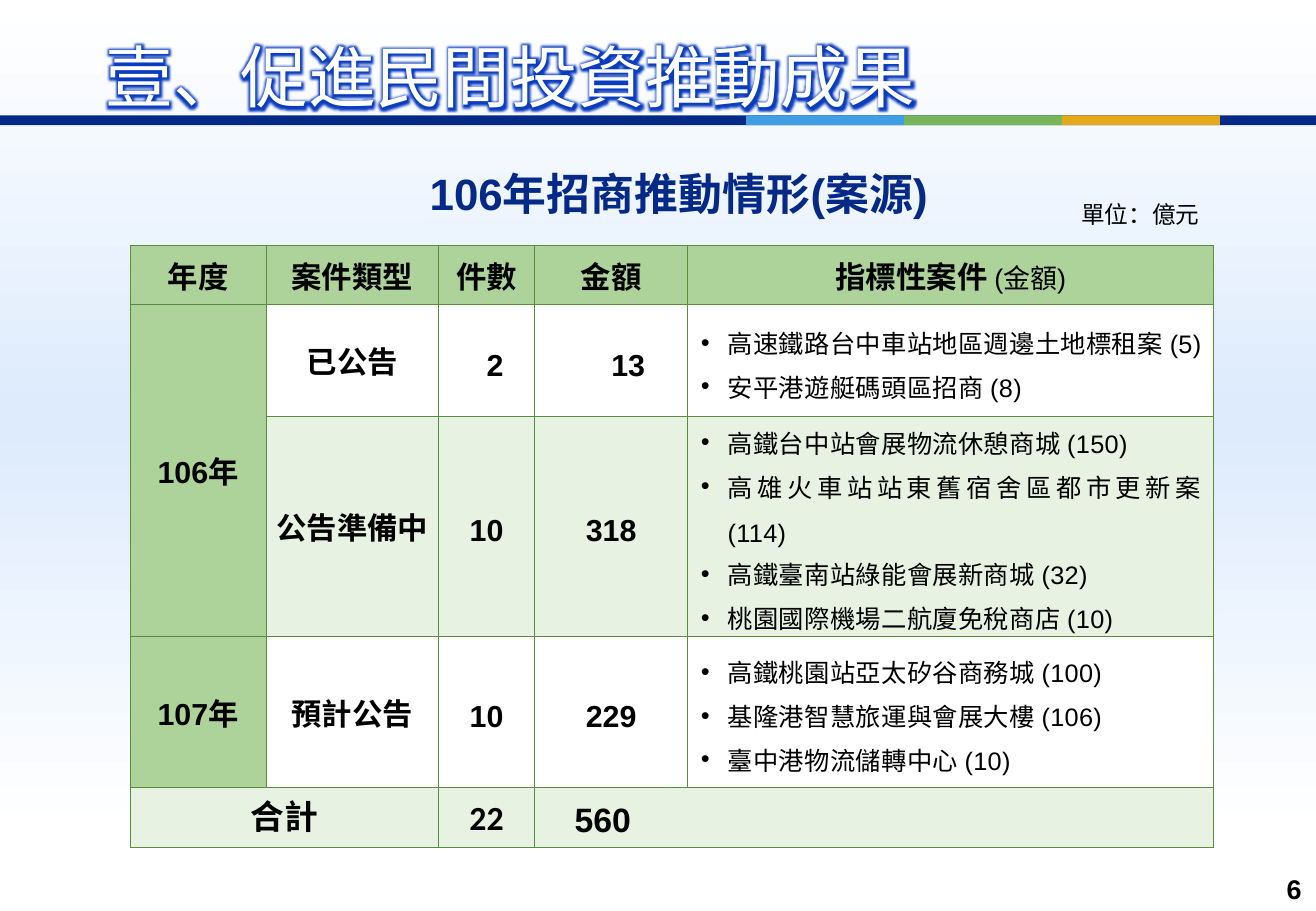
from lxml.etree import SubElement
from pptx import Presentation
from pptx.dml.color import RGBColor
from pptx.enum.shapes import MSO_SHAPE as Shape
from pptx.enum.text import MSO_ANCHOR as Anchor, MSO_AUTO_SIZE as AutoSize, PP_ALIGN as Align
from pptx.oxml import parse_xml
from pptx.oxml.ns import nsdecls, qn
from pptx.util import Inches, Pt

THEME = dict(
    navy="042986", sky="3F9EE4", leaf="77B559", gold="E4A81B", white="FFFFFF", black="000000",
    haze="DDEBFC", glow="0A3CC0", head="ADD39B", tint="E7F2E2", border="588C3E",
    font="Arial", title_font="Calibri",
    title=40, subtitle=26, total=20, cell=18, note=16, case=15, unit=14,
)
TITLE = "壹、促進民間投資推動成果"
SUBTITLE = "106年招商推動情形(案源)"
UNIT = "單位：億元"
PAGE = "6"
HEADERS = ["年度", "案件類型", "件數", "金額", "指標性案件 "]
HEADER_NOTE = "(金額)"
ROWS = [
    dict(year="106年", kind="已公告", count="2", amount="13", fill="white",
         count_indent=0.14, amount_indent=0.28, case_right=0.02,
         cases=["高速鐵路台中車站地區週邊土地標租案 (5)", "安平港遊艇碼頭區招商 (8)"]),
    dict(year="", kind="公告準備中", count="10", amount="318", fill="tint", case_right=0.1,
         cases=["高鐵台中站會展物流休憩商城 (150)", "高雄火車站站東舊宿舍區都市更新案 (114)",
                "高鐵臺南站綠能會展新商城 (32)", "桃園國際機場二航廈免稅商店 (10)"]),
    dict(year="107年", kind="預計公告", count="10", amount="229", fill="white", case_right=0.02,
         cases=["高鐵桃園站亞太矽谷商務城 (100)", "基隆港智慧旅運與會展大樓 (106)",
                "臺中港物流儲轉中心 (10)"]),
]
TOTAL = dict(label="合計", count="22", amount="560")
COLUMN_WIDTHS = [1.12, 1.42, 0.79, 1.26, 4.33]
ROW_HEIGHTS = [0.49, 0.92, 1.65, 1.25, 0.49]
STRIPES = ["sky", "leaf", "gold"]
SLIDE_WIDTH, STRIPE_LEFT, STRIPE_WIDTH = 10.83, 6.14, 1.3


def color(name):
    return RGBColor.from_string(THEME[name])


def place(item, left, top, width, height):
    item.left, item.top, item.width, item.height = map(Inches, (left, top, width, height))


def write(frame, lines, size="cell", font="font", ink="black", bold=False, align=Align.CENTER,
          line=None, indent=None, hanging=0, bullet=None, spacing=None):
    runs = []
    for index, text in enumerate(lines):
        paragraph = frame.paragraphs[0] if index == 0 else frame.add_paragraph()
        paragraph.alignment = align
        paragraph.space_before = Pt(0)
        if line:
            paragraph.line_spacing = Pt(line)
        props = paragraph._p.get_or_add_pPr()
        if indent is not None:
            props.set("marL", str(Inches(indent)))
            props.set("indent", str(Inches(hanging)))
        if bullet:
            SubElement(props, qn("a:buFont"), typeface=THEME["font"])
            SubElement(props, qn("a:buChar"), char=bullet)
        else:
            SubElement(props, qn("a:buNone"))
        run = paragraph.add_run()
        run.text = text
        run.font.size, run.font.name, run.font.bold = Pt(THEME[size]), THEME[font], bold
        run.font.color.rgb = color(ink)
        if spacing:
            run._r.get_or_add_rPr().set("spc", str(spacing))
        runs.append(run)
    return runs


def bar(slide, left, top, width, height, fill):
    shape = slide.shapes.add_shape(Shape.RECTANGLE, *map(Inches, (left, top, width, height)))
    shape.shadow.inherit = False
    shape.line.fill.background()
    shape.fill.solid()
    shape.fill.fore_color.rgb = color(fill)
    return shape


def label(slide, box, text, wrap=True, anchor=Anchor.TOP, **style):
    frame = slide.shapes.add_textbox(*map(Inches, box)).text_frame
    frame.word_wrap = wrap
    frame.vertical_anchor = anchor
    write(frame, [text], **style)


def draw_backdrop(slide):
    backdrop = bar(slide, 0, 0, SLIDE_WIDTH, 6.88, "white")
    props = backdrop._element.spPr
    stops = "".join(
        f'<a:gs pos="{pos}"><a:srgbClr val="{THEME[name]}"/></a:gs>'
        for pos, name in ((0, "white"), (50000, "haze"), (100000, "white")))
    gradient = parse_xml(f'<a:gradFill {nsdecls("a")} rotWithShape="1"><a:gsLst>{stops}</a:gsLst>'
                         '<a:lin ang="5400000" scaled="0"/></a:gradFill>')
    props.replace(props.find(qn("a:solidFill")), gradient)
    bar(slide, 0, 0.95, SLIDE_WIDTH, 0.08, "navy")
    for index, stripe in enumerate(STRIPES):
        bar(slide, STRIPE_LEFT + index * STRIPE_WIDTH, 0.95, STRIPE_WIDTH, 0.08, stripe)
    tree = slide.shapes._spTree
    for placeholder in list(slide.placeholders):
        tree.append(placeholder._element)


def draw_titles(slide):
    title, subtitle = slide.shapes.title, slide.placeholders[1]
    place(title, 0.77, 0.29, 9.82, 0.67)
    title.text_frame.vertical_anchor = Anchor.MIDDLE
    run, = write(title.text_frame, [TITLE], size="title", font="title_font", ink="white",
                 align=Align.LEFT)
    run._r.rPr.find(qn("a:solidFill")).addnext(parse_xml(
        f'<a:effectLst {nsdecls("a")}><a:glow rad="{Pt(5)}"><a:srgbClr val="{THEME["glow"]}"/>'
        '</a:glow></a:effectLst>'))
    place(subtitle, 2.82, 1.32, 5.53, 0.54)
    write(subtitle.text_frame, [SUBTITLE], size="subtitle", ink="navy", bold=True, indent=0)
    for heading in (title, subtitle):
        heading.text_frame.auto_size = AutoSize.NONE


def fill_cell(cell, lines, fill, sides=(0.1, 0.1), ends=0.05, **style):
    cell.fill.solid()
    cell.fill.fore_color.rgb = color(fill)
    cell.vertical_anchor = Anchor.MIDDLE
    cell.margin_left, cell.margin_right = map(Inches, sides)
    cell.margin_top = cell.margin_bottom = Inches(ends)
    return write(cell.text_frame, lines, **{"bold": True, "line": 26, **style})


def draw_table(slide):
    table = slide.shapes.add_table(
        len(ROW_HEIGHTS), len(COLUMN_WIDTHS), Inches(1.07), Inches(2.02),
        Inches(sum(COLUMN_WIDTHS)), Inches(sum(ROW_HEIGHTS))).table
    table.first_row = table.horz_banding = False
    for column, width in zip(table.columns, COLUMN_WIDTHS):
        column.width = Inches(width)
    for row, height in zip(table.rows, ROW_HEIGHTS):
        row.height = Inches(height)
    for cell in table.iter_cells():
        props = cell._tc.get_or_add_tcPr()
        for side in ("lnL", "lnR", "lnT", "lnB"):
            props.append(parse_xml(
                f'<a:{side} {nsdecls("a")} w="{Pt(0.5)}"><a:solidFill>'
                f'<a:srgbClr val="{THEME["border"]}"/></a:solidFill></a:{side}>'))
    last = len(ROW_HEIGHTS) - 1
    table.cell(1, 0).merge(table.cell(2, 0))
    table.cell(last, 0).merge(table.cell(last, 1))
    table.cell(last, 3).merge(table.cell(last, 4))

    for index, header in enumerate(HEADERS):
        fill_cell(table.cell(0, index), [header], "head")
    note = table.cell(0, 4).text_frame.paragraphs[0].add_run()
    note.text = HEADER_NOTE
    note.font.size, note.font.name, note.font.bold = Pt(THEME["note"]), THEME["font"], False
    note.font.color.rgb = color("black")

    for index, row in enumerate(ROWS, 1):
        year, kind, count, amount, cases = (table.cell(index, column) for column in range(5))
        fill = row["fill"]
        if row["year"]:
            fill_cell(year, [row["year"]], "head")
        fill_cell(kind, [row["kind"]], fill, sides=(0.04, 0.04))
        fill_cell(count, [row["count"]], fill, indent=row.get("count_indent"))
        fill_cell(amount, [row["amount"]], fill, indent=row.get("amount_indent"))
        fill_cell(cases, row["cases"], fill, sides=(0.02, row["case_right"]), ends=0, size="case",
                  bold=False, align=Align.JUSTIFY, indent=0.31, hanging=-0.22, bullet="•",
                  spacing=20)

    fill_cell(table.cell(last, 0), [TOTAL["label"]], "tint", size="total")
    fill_cell(table.cell(last, 2), [TOTAL["count"]], "tint", size="total", font="title_font")
    fill_cell(table.cell(last, 3), [TOTAL["amount"]], "tint", size="total", align=Align.LEFT,
              indent=0.23)


def main():
    deck = Presentation()
    deck.slide_width, deck.slide_height = Inches(SLIDE_WIDTH), Inches(7.5)
    slide = deck.slides.add_slide(deck.slide_layouts[1])
    draw_backdrop(slide)
    draw_titles(slide)
    draw_table(slide)
    label(slide, (8.8, 1.6, 1.18, 0.34), UNIT, wrap=False, size="unit", align=Align.LEFT)
    label(slide, (8.28, 7.14, 2.53, 0.36), PAGE, anchor=Anchor.MIDDLE, size="note", bold=True,
          align=Align.RIGHT)
    deck.save("out.pptx")


if __name__ == "__main__":
    main()
